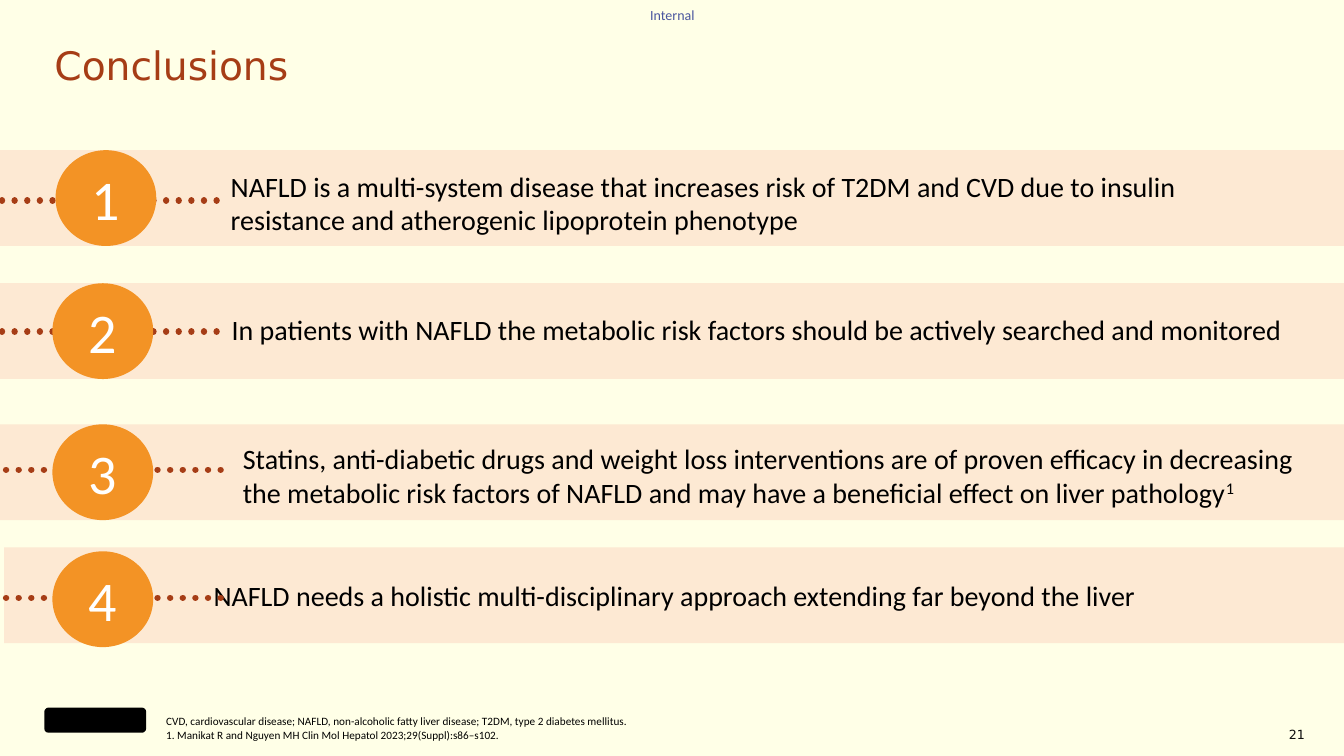
import pptx
import pptx.util
import pptx.dml.color
import pptx.enum.text
import pptx.enum.shapes
import pptx.enum.dml
import lxml.etree

RGB = pptx.dml.color.RGBColor
CREAM = RGB(0xFF, 0xFF, 0xE7)
PEACH = RGB(0xFD, 0xE9, 0xD3)
GOLD = RGB(0xF3, 0x93, 0x25)
RUST = RGB(0xA6, 0x3D, 0x16)
NAVY = RGB(0x4A, 0x56, 0x9E)
BLACK = RGB(0, 0, 0)
WHITE = RGB(0xFF, 0xFF, 0xFF)
GREY = RGB(0x0D, 0x0D, 0x0D)

TITLE = "Conclusions"
# POINTS
POINTS = [
    dict(text="NAFLD is a multi-system disease that increases risk of T2DM and CVD due to insulin resistance and atherogenic lipoprotein phenotype",
         note="", band=(0, 19.87), disc=(4.13, 19.87), dots=(0.15, 26.53), body=(16.43, 21.73)),
    dict(text="In patients with NAFLD the metabolic risk factors should be actively searched and monitored",
         note="", band=(0, 37.47), disc=(3.9, 37.47), dots=(0.15, 43.87), body=(16.5, 40.67)),
    dict(text="Statins, anti-diabetic drugs and weight loss interventions are of proven efficacy in decreasing the metabolic risk factors of NAFLD and may have a beneficial effect on liver pathology",
         note="1", band=(0, 56.13), disc=(3.9, 56.13), dots=(0.45, 62.13), body=(17.33, 57.73)),
    dict(text="NAFLD needs a holistic multi-disciplinary approach extending far beyond the liver",
         note="", band=(0.3, 72.4), disc=(3.9, 72.93), dots=(0.45, 79.07), body=(15.15, 75.87)),
]
NOTES = [
    "CVD, cardiovascular disease; NAFLD, non-alcoholic fatty liver disease; T2DM, type 2 diabetes mellitus.",
    "1. Manikat R and Nguyen MH Clin Mol Hepatol 2023;29(Suppl):s86–s102.",
]
HIGH = 12.67
DISC = 7.5
REACH = 16.43
BODY = (80.1, 10.27)

LEFT, MID = pptx.enum.text.PP_ALIGN.LEFT, pptx.enum.text.PP_ALIGN.CENTER
TOP, HALF = pptx.enum.text.MSO_ANCHOR.TOP, pptx.enum.text.MSO_ANCHOR.MIDDLE
KIND = pptx.enum.shapes.MSO_SHAPE

deck = pptx.Presentation()
deck.slide_width = pptx.util.Inches(13.33)
deck.slide_height = pptx.util.Inches(7.5)
page = deck.slides.add_slide(deck.slide_layouts[5])
page.background.fill.solid()
page.background.fill.fore_color.rgb = CREAM


def place(*share):
    sides = (deck.slide_width, deck.slide_height) * 2
    return [int(side * part / 100) for side, part in zip(sides, share)]


def style(item, **form):
    for name, value in form.items():
        setattr(item, name, value)


def write(shape, lines, size, tint, face="Calibri", align=LEFT, anchor=TOP, pad=True):
    frame = shape.text_frame
    style(frame, word_wrap=True, vertical_anchor=anchor,
          auto_size=pptx.enum.text.MSO_AUTO_SIZE.NONE)
    if not pad:
        style(frame, margin_left=0, margin_right=0, margin_top=0, margin_bottom=0)
    frame.text = "\n".join(lines)
    for para in frame.paragraphs:
        para.alignment = align
        for run in para.runs:
            style(run.font, size=pptx.util.Pt(size), name=face)
            run.font.color.rgb = tint
    return frame


def label(share, *args, **form):
    return write(page.shapes.add_textbox(*place(*share)), *args, **form)


def block(kind, share, tint):
    shape = page.shapes.add_shape(kind, *place(*share))
    shape.shadow.inherit = False
    shape.fill.solid()
    shape.fill.fore_color.rgb = tint
    shape.line.fill.background()
    return shape


def trail(left, top):
    ends = place(left, top, left + REACH, top)
    line = page.shapes.add_connector(pptx.enum.shapes.MSO_CONNECTOR.STRAIGHT, *ends)
    line.line.color.rgb = RUST
    style(line.line, width=pptx.util.Pt(4.5),
          dash_style=pptx.enum.dml.MSO_LINE.ROUND_DOT)
    props = line._element.spPr
    props.ln.set("cap", "rnd")
    lxml.etree.SubElement(props, pptx.oxml.ns.qn("a:effectLst"))


head = page.shapes.title
style(head, **dict(zip(("left", "top", "width", "height"), place(3.3, 5.73, 93.25, 6.67))))
write(head, [TITLE], 28, RUST, "DejaVu Sans", anchor=HALF)
head.text_frame.paragraphs[0].line_spacing = 0.85

for rank, point in enumerate(POINTS, 1):
    left, top = point["band"]
    block(KIND.RECTANGLE, (left, top, 100 - left, HIGH), PEACH)
    frame = label(point["body"] + BODY, [point["text"]], 20, BLACK)
    if point["note"]:
        mark = frame.paragraphs[0].add_run()
        mark.text = point["note"]
        style(mark.font, size=pptx.util.Pt(20), name="Calibri")
        mark.font.color.rgb = BLACK
        mark.font._element.set("baseline", "30000")
    trail(*point["dots"])
    disc = block(KIND.OVAL, point["disc"] + (DISC, HIGH), GOLD)
    write(disc, [str(rank)], 40, WHITE, align=MID, anchor=HALF)

label((48.38, 0.93, 3.8, 2.27), ["Internal"], 10, NAVY, pad=False)
label((94.35, 95.47, 4.28, 3.33), ["21"], 9, GREY, "DejaVu Sans", MID, HALF)
label((11.63, 93.87, 84.3, 4.93), NOTES, 8, BLACK)
block(KIND.ROUNDED_RECTANGLE, (3.3, 93.6, 7.58, 3.33), BLACK)

deck.save("out.pptx")
